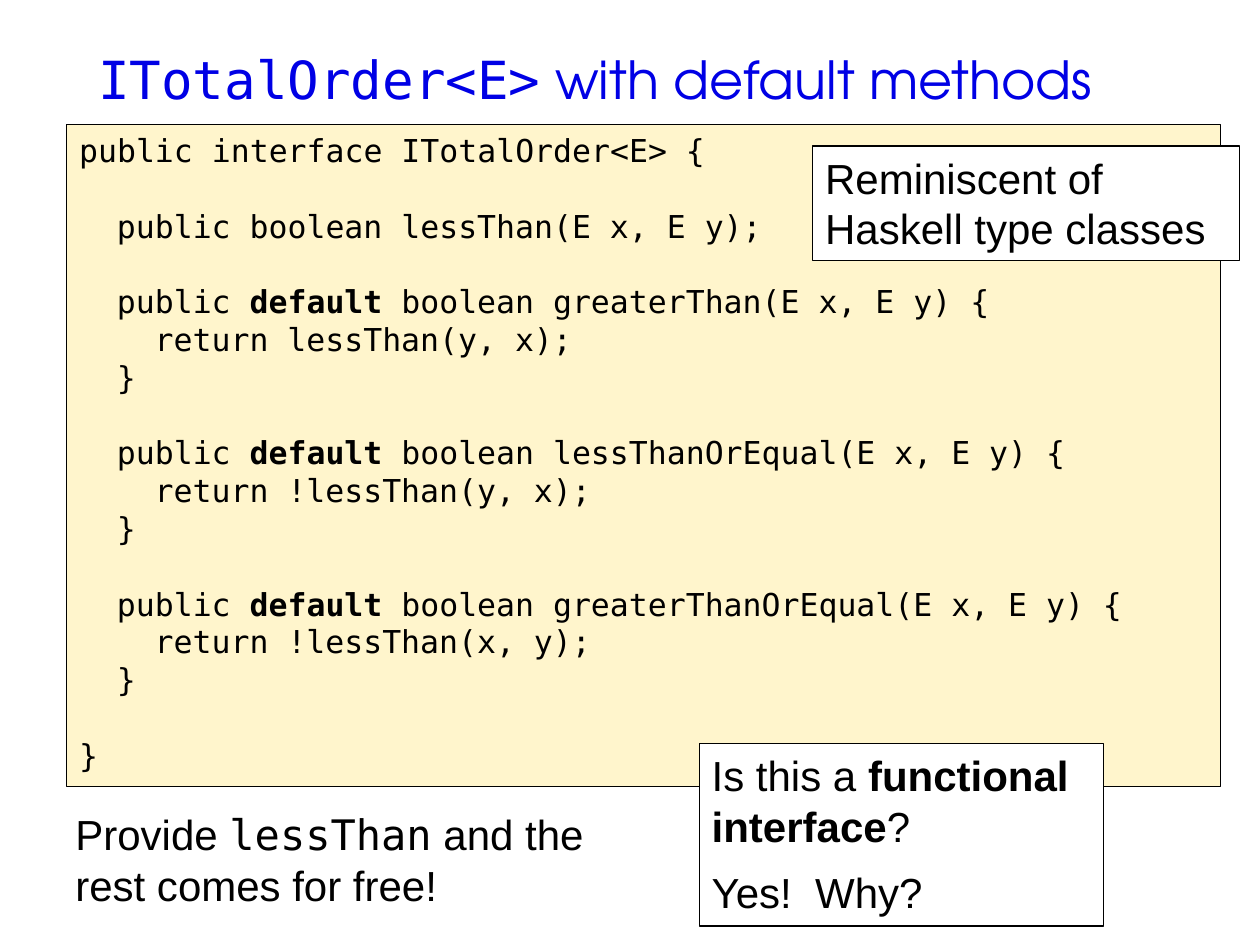
"""Build the slide on ITotalOrder<E> with default methods."""
from pptx import Presentation
from pptx.dml.color import RGBColor
from pptx.enum.shapes import MSO_SHAPE
from pptx.enum.text import MSO_ANCHOR, PP_ALIGN
from pptx.util import Inches, Pt

MONO, SANS, TITLE = "DejaVu Sans Mono", "Arial", "TeX Gyre Adventor"


def rgb(value):
    return RGBColor.from_string(value)


def add_box(box, paragraphs, size, fill=None, line=None, color="000000", anchor=MSO_ANCHOR.TOP):
    """Add a rectangle of (level, space before, runs) paragraphs; a run is (text, font, bold)."""
    sp = s.shapes.add_shape(MSO_SHAPE.RECTANGLE, *[Inches(v) for v in box])
    sp.shadow.inherit = False
    if fill:
        sp.fill.solid()
        sp.fill.fore_color.rgb = rgb(fill)
    else:
        sp.fill.background()
    if line:
        sp.line.color.rgb = rgb(line)
        sp.line.width = Pt(0.75)
    else:
        sp.line.fill.background()
    tf = sp.text_frame
    tf.word_wrap = True
    tf.vertical_anchor = anchor
    for i, (level, before, runs) in enumerate(paragraphs):
        p = tf.add_paragraph() if i else tf.paragraphs[0]
        p.alignment = PP_ALIGN.LEFT
        p.space_before = Pt(before)
        pPr = p._p.get_or_add_pPr()
        pPr.set("marL", str(Inches(0.3 * level)))
        pPr.set("indent", "0")
        for text, font, bold in runs:
            r = p.add_run()
            r.text = text
            r.font.name = font
            r.font.size = Pt(size)
            r.font.bold = bold
            r.font.color.rgb = rgb(color)


prs = Presentation()
prs.slide_width, prs.slide_height = Inches(10), Inches(7.5)
s = prs.slides.add_slide(prs.slide_layouts[6])

title = [("ITotalOrder<E>", MONO, False), (" with default methods", TITLE, False)]
add_box((0.68, 0.12, 8.92, 1), [(0, 0, title)], 30, color="0000E5", anchor=MSO_ANCHOR.MIDDLE)

gap = 21.6
code = [
    (0, 0, [("public interface ITotalOrder<E> {", MONO, False)]),
    (1, gap, [("public boolean lessThan(E x, E y);", MONO, False)]),
]
methods = [
    ("greaterThan", "lessThan(y, x)"),
    ("lessThanOrEqual", "!lessThan(y, x)"),
    ("greaterThanOrEqual", "!lessThan(x, y)"),
]
for name, result in methods:
    code += [
        (1, gap, [("public ", MONO, False), ("default ", MONO, True),
                  (f"boolean {name}(E x, E y) {{", MONO, False)]),
        (2, 0, [(f"return {result};", MONO, False)]),
        (1, 0, [("}", MONO, False)]),
    ]
code.append((0, gap, [("}", MONO, False)]))
add_box((0.53, 0.99, 9.16, 5.25), code, 18, "FFF5CC", "000000")

summary = [("Provide ", SANS, False), ("lessThan", MONO, False),
           (" and the rest comes for free!", SANS, False)]
add_box((0.5, 6.37, 4.55, 0.91), [(0, 0, summary)], 24, "FFFFFF")

question = [("Is this a ", SANS, False), ("functional interface", SANS, True), ("?", SANS, False)]
answer = [("Yes!  Why?", SANS, False)]
add_box((5.55, 5.9, 3.21, 1.45), [(0, 0, question), (0, 9.2, answer)], 24, "FFFFFF", "000000")

remark = [("Reminiscent of Haskell type classes", SANS, False)]
add_box((6.45, 1.16, 3.39, 0.91), [(0, 0, remark)], 24, "FFFFFF", "000000")

prs.save("out.pptx")
